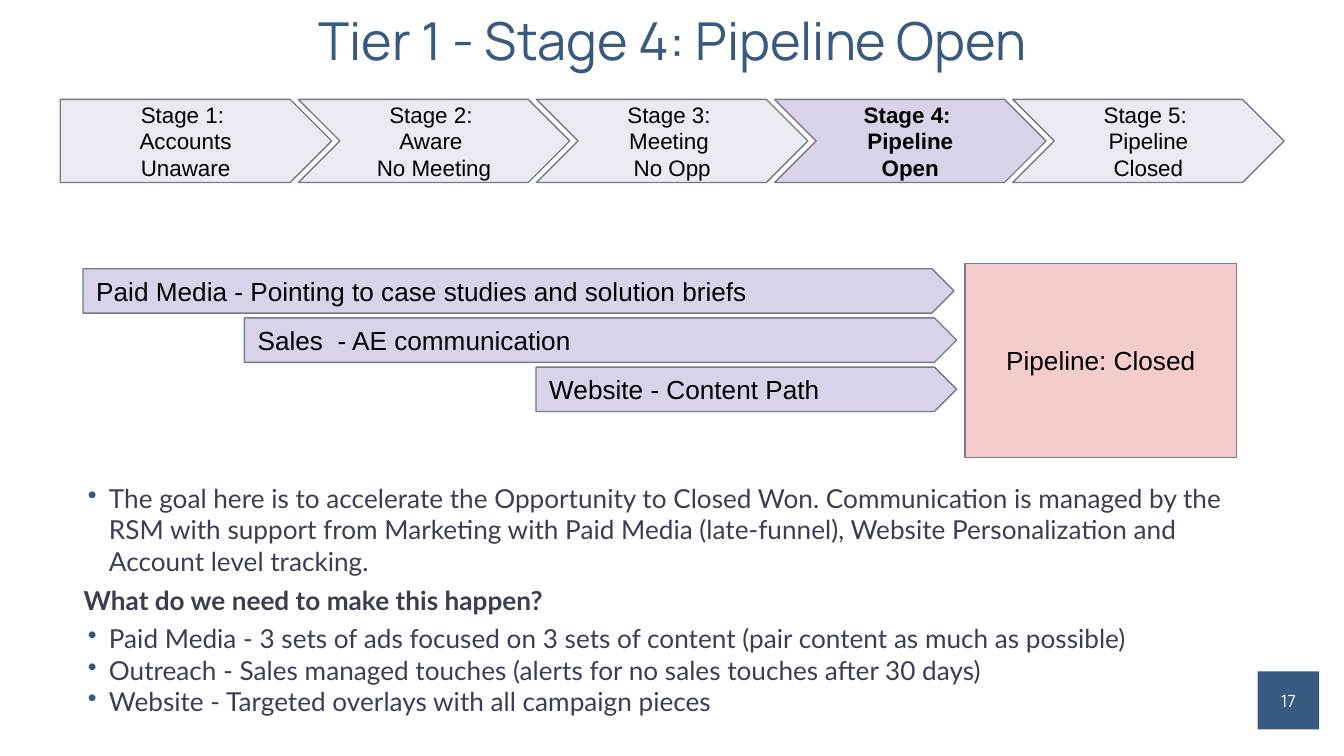
from dataclasses import dataclass

from lxml import etree
from pptx import Presentation
from pptx.dml.color import RGBColor
from pptx.enum import shapes, text
from pptx.oxml import ns
from pptx.util import Cm, Pt


@dataclass(frozen=True)
class Theme:
    navy: str = "395A80"
    ink: str = "3A3F50"
    black: str = "000000"
    white: str = "FFFFFF"
    outline: str = "757B89"
    stage: str = "E9EAF2"
    active: str = "D9D2E9"
    closed: str = "F4CCCC"
    heading_font: str = "Manrope"
    body_font: str = "Lato"
    shape_font: str = "Arial"
    title_size: float = 28
    body_size: float = 14
    stage_size: float = 12
    number_size: float = 9
    line_width: float = 0.75


THEME = Theme()
PRESET = shapes.MSO_SHAPE
CENTER = text.PP_ALIGN.CENTER
LEFT = text.PP_ALIGN.LEFT


@dataclass(frozen=True)
class Box:
    """A rectangle in centimetres."""
    left: float
    top: float
    width: float
    height: float

    def lengths(self) -> tuple:
        return Cm(self.left), Cm(self.top), Cm(self.width), Cm(self.height)


@dataclass(frozen=True)
class TextStyle:
    font: str
    size: float
    color: str
    bold: bool = False
    align: text.PP_ALIGN = LEFT


@dataclass(frozen=True)
class Stage:
    lines: tuple
    active: bool = False


@dataclass(frozen=True)
class Channel:
    label: str
    left: float
    right: float


@dataclass(frozen=True)
class BodyLine:
    content: str
    space_before: float = 0
    bullet: bool = True


# A vertical tab is a line break within a paragraph.
STAGES = (
    Stage(("Stage 1: ", "Accounts", "Unaware")),
    Stage(("Stage 2: ", "Aware \vNo Meeting")),
    Stage(("Stage 3: ", "Meeting \vNo Opp")),
    Stage(("Stage 4: ", "Pipeline", "Open"), active=True),
    Stage(("Stage 5: ", "Pipeline", "Closed")),
)
CHANNELS = (
    Channel("Paid Media - Pointing to case studies and solution briefs", 1.57, 18.03),
    Channel("Sales  - AE communication", 4.62, 18.08),
    Channel("Website - Content Path", 10.13, 18.08),
)
BODY = (
    BodyLine("The goal here is to accelerate the Opportunity to Closed Won. "
             "Communication is managed by the RSM with support from Marketing with "
             "Paid Media (late-funnel), Website Personalization and Account level tracking."),
    BodyLine("What do we need to make this happen?", 4, bullet=False),
    BodyLine("Paid Media - 3 sets of ads focused on 3 sets of content "
             "(pair content as much as possible)", 4),
    BodyLine("Outreach - Sales managed touches (alerts for no sales touches after 30 days)"),
    BodyLine("Website - Targeted overlays with all campaign pieces"),
)


def set_frame(frame, margin: float, anchor: text.MSO_ANCHOR) -> None:
    values = dict.fromkeys(
        ("margin_left", "margin_top", "margin_right", "margin_bottom"), Cm(margin))
    values.update(word_wrap=True, vertical_anchor=anchor)
    for name, value in values.items():
        setattr(frame, name, value)


def write(paragraph, content: str, style: TextStyle) -> None:
    paragraph.text = content
    paragraph.alignment = style.align
    values = {"name": style.font, "size": Pt(style.size), "bold": style.bold}
    for run in paragraph.runs:
        for name, value in values.items():
            setattr(run.font, name, value)
        run.font.color.rgb = RGBColor.from_string(style.color)


def write_lines(frame, lines: tuple, style: TextStyle) -> None:
    for index, line in enumerate(lines):
        paragraph = frame.add_paragraph() if index else frame.paragraphs[0]
        write(paragraph, line, style)


def add_bullet(paragraph) -> None:
    properties = paragraph._p.get_or_add_pPr()
    properties.set("marL", str(Cm(0.48)))
    properties.set("indent", str(Cm(-0.4)))
    color = etree.SubElement(properties, ns.qn("a:buClr"))
    etree.SubElement(color, ns.qn("a:srgbClr"), val=THEME.navy)
    etree.SubElement(properties, ns.qn("a:buChar"), char="•")


def add_text(slide, box: Box, anchor: text.MSO_ANCHOR):
    frame = slide.shapes.add_textbox(*box.lengths()).text_frame
    set_frame(frame, 0, anchor)
    return frame


def add_block(slide, preset: PRESET, box: Box, fill: str, lines: tuple,
              style: TextStyle, outlined: bool = True, margin: float = 0.25) -> None:
    shape = slide.shapes.add_shape(preset, *box.lengths())
    shape.shadow.inherit = False
    shape.fill.solid()
    shape.fill.fore_color.rgb = RGBColor.from_string(fill)
    if outlined:
        shape.line.color.rgb = RGBColor.from_string(THEME.outline)
        shape.line.width = Pt(THEME.line_width)
    else:
        shape.line.fill.background()
    set_frame(shape.text_frame, margin, text.MSO_ANCHOR.MIDDLE)
    write_lines(shape.text_frame, lines, style)


def add_title(slide) -> None:
    frame = add_text(slide, Box(1.6, 0.28, 22.22, 1.07), text.MSO_ANCHOR.MIDDLE)
    style = TextStyle(THEME.heading_font, THEME.title_size, THEME.navy, align=CENTER)
    write_lines(frame, ("Tier 1 - Stage 4: Pipeline Open",), style)
    frame.paragraphs[0].line_spacing = 0.9


def add_stages(slide) -> None:
    for index, stage in enumerate(STAGES):
        preset = PRESET.CHEVRON if index else PRESET.PENTAGON
        fill = THEME.active if stage.active else THEME.stage
        style = TextStyle(THEME.shape_font, THEME.stage_size, THEME.black, stage.active, CENTER)
        add_block(slide, preset, Box(1.14 + 4.5 * index, 1.88, 5.13, 1.57),
                  fill, stage.lines, style)


def add_channels(slide) -> None:
    style = TextStyle(THEME.shape_font, THEME.body_size, THEME.black)
    for index, channel in enumerate(CHANNELS):
        box = Box(channel.left, 5.08 + 0.93 * index, channel.right - channel.left, 0.84)
        add_block(slide, PRESET.PENTAGON, box, THEME.active, (channel.label,), style)


def add_body(slide) -> None:
    frame = add_text(slide, Box(1.58, 9.12, 22.22, 5.23), text.MSO_ANCHOR.TOP)
    for index, line in enumerate(BODY):
        paragraph = frame.add_paragraph() if index else frame.paragraphs[0]
        if line.bullet:
            add_bullet(paragraph)
        paragraph.space_before = Pt(line.space_before)
        write(paragraph, line.content,
              TextStyle(THEME.body_font, THEME.body_size, THEME.ink, not line.bullet))


def main() -> None:
    presentation = Presentation()
    presentation.slide_width, presentation.slide_height = Cm(25.4), Cm(14.29)
    slide = presentation.slides.add_slide(presentation.slide_layouts[6])
    add_title(slide)
    add_body(slide)
    add_block(slide, PRESET.RECTANGLE, Box(23.77, 12.69, 1.16, 1.1), THEME.navy, ("17",),
              TextStyle(THEME.heading_font, THEME.number_size, THEME.white, align=CENTER),
              outlined=False, margin=0)
    add_channels(slide)
    add_block(slide, PRESET.RECTANGLE, Box(18.24, 4.98, 5.13, 3.67), THEME.closed,
              ("Pipeline: Closed",),
              TextStyle(THEME.shape_font, THEME.body_size, THEME.black, align=CENTER))
    add_stages(slide)
    presentation.save("out.pptx")


if __name__ == "__main__":
    main()
